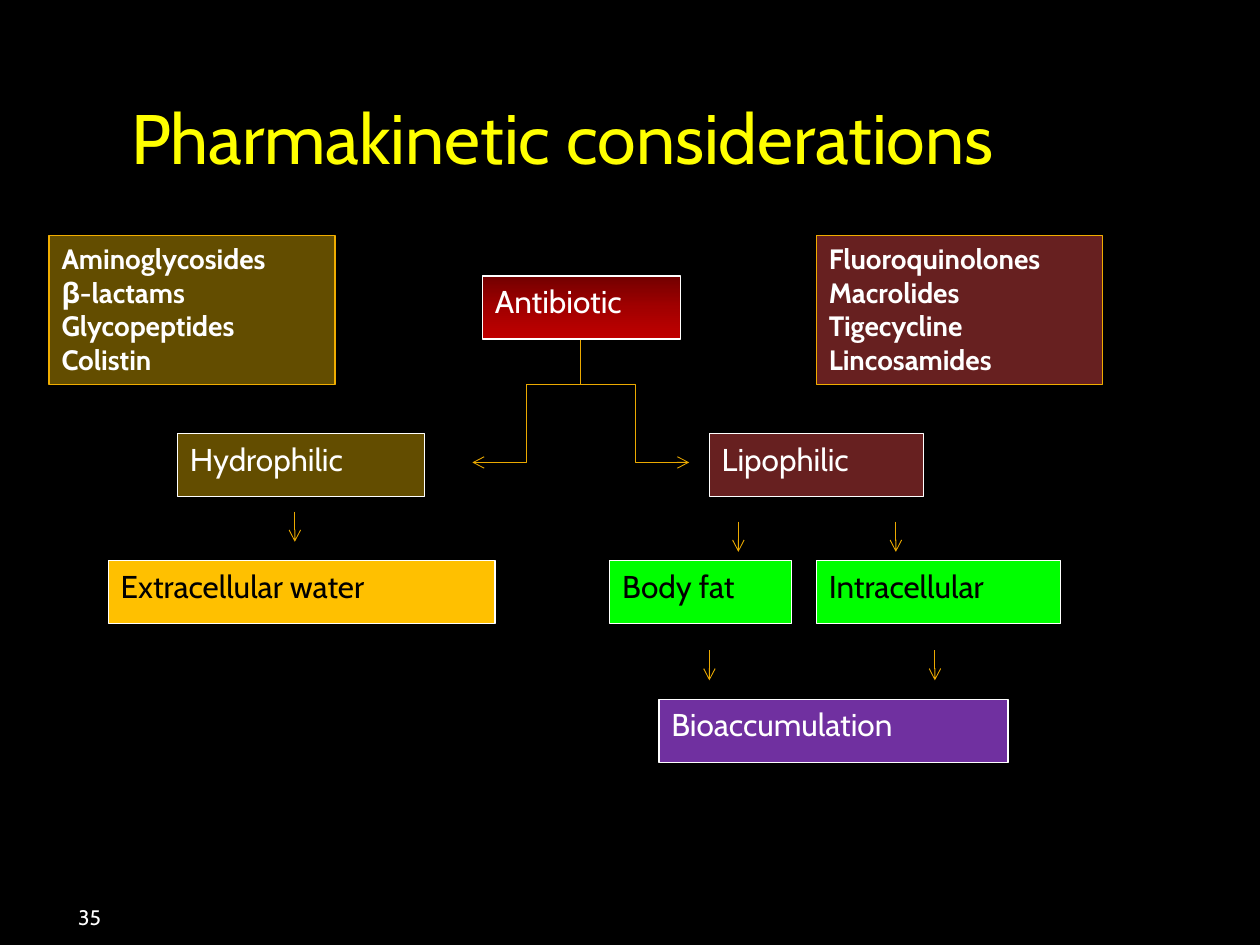
import copy
from dataclasses import dataclass

import pptx
import pptx.dml.color
import pptx.enum.shapes
import pptx.enum.text
import pptx.oxml
import pptx.oxml.ns
import pptx.util
from pptx.util import Inches

FONT = "Cabin"
COLORS = {
    "black": "000000",
    "white": "FFFFFF",
    "yellow": "FFFF00",
    "olive": "634D00",
    "maroon": "672020",
    "amber": "FFC000",
    "green": "00FF00",
    "purple": "7030A0",
    "border": "F0AD00",
    "arrow": "EBA900",
    "red dark": "720000",
    "red middle": "A20000",
    "red light": "C00000",
}
RED_STOPS = ("red dark", "red middle", "red light")
ROOT_X, FORK_Y, BRANCH_Y, BRANCH_REACH = 4.61, 3.05, 3.67, 0.86
ARROW_LENGTH = 0.24


@dataclass(frozen=True)
class Node:
    """One box of the chart; a fill of several colours is a gradient."""
    text: str
    left: float
    top: float
    width: float
    fill: tuple[str, ...]
    ink: str = "white"
    height: float = 0.5
    border: str = "white"
    size: int = 18
    bold: bool = False


@dataclass(frozen=True)
class Link:
    start: tuple[float, float]
    end: tuple[float, float]
    bent: bool = False
    arrow: bool = True


def drug_list(text: str, left: float, fill: str) -> Node:
    return Node(text, left, 1.87, 2.27, (fill,), height=1.18,
                border="border", size=16, bold=True)


def down_arrow(x: float, top: float) -> Link:
    return Link((x, top), (x, top + ARROW_LENGTH))


NODES = [
    Node("Antibiotic", 3.83, 2.19, 1.57, RED_STOPS),
    Node("Hydrophilic", 1.41, 3.44, 1.96, ("olive",)),
    Node("Lipophilic", 5.63, 3.44, 1.7, ("maroon",)),
    Node("Extracellular water", 0.86, 4.45, 3.07, ("amber",), "black"),
    Node("Body fat", 4.84, 4.45, 1.44, ("green",), "black"),
    Node("Intracellular", 6.48, 4.45, 1.94, ("green",), "black"),
    Node("Bioaccumulation", 5.23, 5.55, 2.77, ("purple",)),
    drug_list("Aminoglycosides\nβ-lactams\nGlycopeptides\nColistin", 0.39, "olive"),
    drug_list("Fluoroquinolones\nMacrolides\nTigecycline\nLincosamides", 6.48, "maroon"),
]
LINKS = [
    Link((ROOT_X, FORK_Y), (ROOT_X, 2.69), arrow=False),
    *(Link((ROOT_X, FORK_Y), (ROOT_X + reach, BRANCH_Y), bent=True)
      for reach in (-BRANCH_REACH, BRANCH_REACH)),
    down_arrow(2.34, 4.06),
    *(down_arrow(x, 4.14) for x in (5.86, 7.11)),
    *(down_arrow(x, 5.16) for x in (5.63, 7.42)),
]


def rgb(name: str) -> pptx.dml.color.RGBColor:
    return pptx.dml.color.RGBColor.from_string(COLORS[name])


def write(frame, text: str, size: int, ink: str, bold: bool = False,
          anchor=pptx.enum.text.MSO_ANCHOR.TOP) -> None:
    frame.text = text
    frame.word_wrap = True
    frame.auto_size = pptx.enum.text.MSO_AUTO_SIZE.NONE
    frame.vertical_anchor = anchor
    for para in frame.paragraphs:
        para.alignment = pptx.enum.text.PP_ALIGN.LEFT
        para.font.name = FONT
        para.font.size = pptx.util.Pt(size)
        para.font.bold = bold
        para.font.color.rgb = rgb(ink)


def fill_gradient(box, names: tuple[str, str, str]) -> None:
    """Fill from top to bottom with three evenly spaced colours."""
    box.fill.gradient()
    box.fill.gradient_angle = 270
    stop_list = box._element.spPr.find(".//" + pptx.oxml.ns.qn("a:gsLst"))
    stop_list.insert(1, copy.deepcopy(stop_list[0]))
    for index, (stop, name) in enumerate(zip(box.fill.gradient_stops, names)):
        stop.position = index / 2
        stop.color.rgb = rgb(name)


def draw_node(page, node: Node) -> None:
    box = page.shapes.add_shape(
        pptx.enum.shapes.MSO_SHAPE.RECTANGLE, Inches(node.left),
        Inches(node.top), Inches(node.width), Inches(node.height))
    box.shadow.inherit = False
    if len(node.fill) > 1:
        fill_gradient(box, node.fill)
    else:
        box.fill.solid()
        box.fill.fore_color.rgb = rgb(node.fill[0])
    box.line.color.rgb = rgb(node.border)
    box.line.width = pptx.util.Pt(0.75)
    write(box.text_frame, node.text, node.size, node.ink, node.bold)


def draw_link(page, link: Link) -> None:
    kinds = pptx.enum.shapes.MSO_CONNECTOR
    connector = page.shapes.add_connector(
        kinds.ELBOW if link.bent else kinds.STRAIGHT,
        *(Inches(value) for value in link.start + link.end))
    connector.line.color.rgb = rgb("arrow")
    connector.line.width = pptx.util.Pt(0.5)
    if link.arrow:
        outline = connector.line._get_or_add_ln()
        tail = pptx.oxml.parse_xml(
            f'<a:tailEnd {pptx.oxml.ns.nsdecls("a")} type="arrow"/>')
        outline.append(tail)
    no_effects = pptx.oxml.parse_xml(
        f'<a:effectLst {pptx.oxml.ns.nsdecls("a")}/>')
    connector._element.spPr.append(no_effects)


def draw_title(page) -> None:
    title = page.shapes.title
    title.left, title.top = Inches(0.94), Inches(0.7)
    title.width, title.height = Inches(7.69), Inches(0.77)
    write(title.text_frame, "Pharmakinetic considerations", 40, "yellow")


def draw_page_number(page) -> None:
    box = page.shapes.add_textbox(
        Inches(0.5), Inches(7.08), Inches(2.33), Inches(0.3))
    frame = box.text_frame
    write(frame, "35", 12, "white", anchor=pptx.enum.text.MSO_ANCHOR.BOTTOM)
    frame.margin_left = Inches(0.12)
    frame.margin_right = Inches(0.05)
    frame.margin_bottom = 0


def main() -> None:
    deck = pptx.Presentation()
    deck.slide_width, deck.slide_height = Inches(10), Inches(7.5)
    title_only = deck.slide_layouts[5]
    page = deck.slides.add_slide(title_only)
    page.background.fill.solid()
    page.background.fill.fore_color.rgb = rgb("black")
    draw_title(page)
    for link in LINKS:
        draw_link(page, link)
    for node in NODES:
        draw_node(page, node)
    draw_page_number(page)
    deck.save("out.pptx")


if __name__ == "__main__":
    main()
